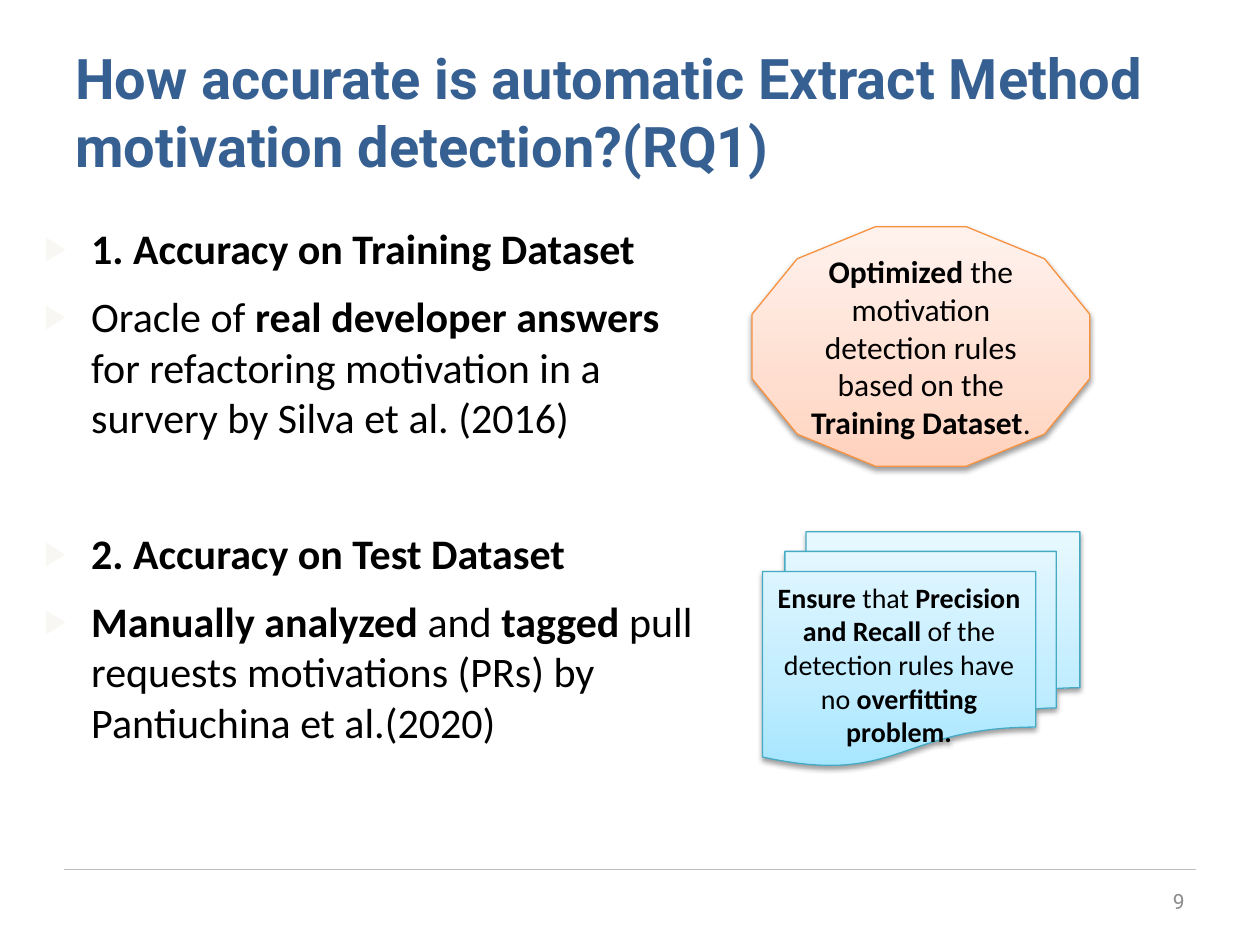
from dataclasses import dataclass

from pptx import Presentation
from pptx.dml.color import RGBColor as Rgb
from pptx.enum.shapes import MSO_CONNECTOR as Connector, MSO_SHAPE as Shape
from pptx.enum.text import MSO_ANCHOR as Anchor, PP_ALIGN as Align
from pptx.oxml import parse_xml
from pptx.oxml.ns import nsdecls, qn
from pptx.util import Cm, Pt


@dataclass(frozen=True)
class Theme:
    """Colours, fonts and type sizes of the slide."""
    title: str = "376092"
    ink: str = "000000"
    number: str = "8C8C8C"
    rule: str = "BFBFBF"
    bullet: str = "F8F7F3"
    orange_line: str = "F69240"
    orange_stops: tuple = ((0, "FFD2BD"), (35, "FFDED0"), (100, "FFF2ED"))
    blue_line: str = "46AAC5"
    blue_stops: tuple = ((0, "A7E6FF"), (35, "C1EDFF"), (100, "E7F8FF"))
    heading_font: str = "Roboto"
    body_font: str = "Calibri"
    title_size: int = 32
    body_size: int = 24
    rules_size: int = 18
    check_size: int = 16
    number_size: int = 12


THEME = Theme()


def apply_format(target, values):
    """Set every attribute named in values on target."""
    for attribute, value in values.items():
        setattr(target, attribute, value)


def write_runs(paragraph, runs, size, font=THEME.body_font, color=THEME.ink):
    """Add (text, bold) runs in one font, size and colour."""
    for words, bold in runs:
        run = paragraph.add_run()
        run.text = words
        apply_format(run.font, {"name": font, "size": Pt(size), "bold": bold})
        run.font.color.rgb = Rgb.from_string(color)


def add_text(slide, box, frame_format):
    """Add a wrapping text box and return its text frame."""
    frame = slide.shapes.add_textbox(*map(Cm, box)).text_frame
    apply_format(frame, {"word_wrap": True, **frame_format})
    return frame


def add_bullet(paragraph, indent):
    """Give the paragraph a pale triangle with a hanging indent."""
    properties = paragraph._p.get_or_add_pPr()
    for name, distance in {"marL": indent, "indent": -indent}.items():
        properties.set(name, str(distance))
    for markup in (
        f'<a:buClr {nsdecls("a")}><a:srgbClr val="{THEME.bullet}"/></a:buClr>',
        f'<a:buSzPct {nsdecls("a")} val="80000"/>',
        f'<a:buFont {nsdecls("a")} typeface="{THEME.body_font}"/>',
        f'<a:buChar {nsdecls("a")} char="▶"/>',
    ):
        properties.append(parse_xml(markup))


def add_findings(slide, box, findings):
    """Add bulleted paragraphs given as (space before, runs)."""
    inset = {"margin_left": Cm(0.18), "margin_right": Cm(0.18),
             "margin_top": Cm(0.1), "margin_bottom": Cm(0.1)}
    frame = add_text(slide, box, inset)
    for index, (gap, runs) in enumerate(findings):
        paragraph = frame.add_paragraph() if index else frame.paragraphs[0]
        paragraph.space_before = Pt(gap)
        add_bullet(paragraph, Cm(0.95))
        write_runs(paragraph, runs, THEME.body_size)


def add_callout(slide, kind, box, stops, outline, runs, size):
    """Add a shaded shape with a soft shadow and centred text."""
    callout = slide.shapes.add_shape(kind, *map(Cm, box))
    callout.fill.gradient()
    callout.line.color.rgb = Rgb.from_string(outline)
    callout.line.width = Pt(0.75)
    callout.shadow.inherit = False
    properties = callout._element.spPr
    shades = "".join(
        f'<a:gs pos="{position * 1000}"><a:srgbClr val="{color}"/></a:gs>'
        for position, color in stops)
    properties.replace(properties.find(qn("a:gradFill")), parse_xml(
        f'<a:gradFill {nsdecls("a")} rotWithShape="1"><a:gsLst>{shades}</a:gsLst>'
        '<a:lin ang="16200000" scaled="0"/></a:gradFill>'))
    properties.find(qn("a:effectLst")).append(parse_xml(
        f'<a:outerShdw {nsdecls("a")} blurRad="{Pt(3.1)}" dist="{Pt(1.6)}" '
        'dir="5400000" rotWithShape="0"><a:srgbClr val="000000">'
        '<a:alpha val="38000"/></a:srgbClr></a:outerShdw>'))
    frame = callout.text_frame
    apply_format(frame, {"word_wrap": True, "vertical_anchor": Anchor.MIDDLE})
    message = frame.paragraphs[0]
    message.alignment = Align.CENTER
    write_runs(message, runs, size)


def add_title(slide, box, words):
    """Add the slide heading."""
    frame = add_text(slide, box, {"vertical_anchor": Anchor.TOP})
    write_runs(frame.paragraphs[0], [(words, True)], THEME.title_size,
               THEME.heading_font, THEME.title)


def add_footer(slide, number):
    """Add the bottom rule and the slide number."""
    rule = slide.shapes.add_connector(
        Connector.STRAIGHT, Cm(1.3), Cm(17.53), Cm(24.1), Cm(17.53))
    rule.line.color.rgb = Rgb.from_string(THEME.rule)
    rule.line.width = Pt(0.75)
    rule._element.spPr.append(parse_xml(f'<a:effectLst {nsdecls("a")}/>'))
    frame = add_text(slide, (18.21, 17.65, 5.92, 1.02),
                     {"vertical_anchor": Anchor.MIDDLE})
    frame.paragraphs[0].alignment = Align.RIGHT
    write_runs(frame.paragraphs[0], [(number, False)], THEME.number_size,
               THEME.heading_font, THEME.number)


def main():
    """Build the slide and save it."""
    deck = Presentation()
    apply_format(deck, {"slide_width": Cm(25.4), "slide_height": Cm(19.05)})
    slide = deck.slides.add_slide(deck.slide_layouts[6])
    add_footer(slide, "9")
    add_title(slide, (1.27, 0.76, 22.86, 3.18),
              "How accurate is automatic Extract Method motivation detection?(RQ1)")
    add_findings(slide, (0.71, 4.39, 13.79, 11.35), [
        (10, [("1. Accuracy on Training Dataset", True)]),
        (10, [("Oracle of ", False), ("real developer answers ", True),
              ("for refactoring motivation in a survery by Silva et al. (2016)",
               False)]),
        (49, [("2. Accuracy on Test Dataset", True)]),
        (10, [("Manually analyzed", True), (" and ", False), ("tagged", True),
              (" pull requests motivations (PRs) by Pantiuchina et al.(2020)",
               False)]),
    ])
    add_callout(slide, Shape.FLOWCHART_MULTIDOCUMENT, (15.37, 10.72, 6.4, 4.72),
                THEME.blue_stops, THEME.blue_line,
                [("Ensure ", True), ("that ", False),
                 ("Precision and Recall", True),
                 (" of the detection rules have no ", False),
                 ("overfitting problem.", True)], THEME.check_size)
    add_callout(slide, Shape.DODECAGON, (15.16, 4.57, 6.81, 4.83),
                THEME.orange_stops, THEME.orange_line,
                [("Optimized", True),
                 (" the motivation detection rules based on the ", False),
                 ("Training Dataset", True), (".", False)], THEME.rules_size)
    deck.save("out.pptx")


if __name__ == "__main__":
    main()
